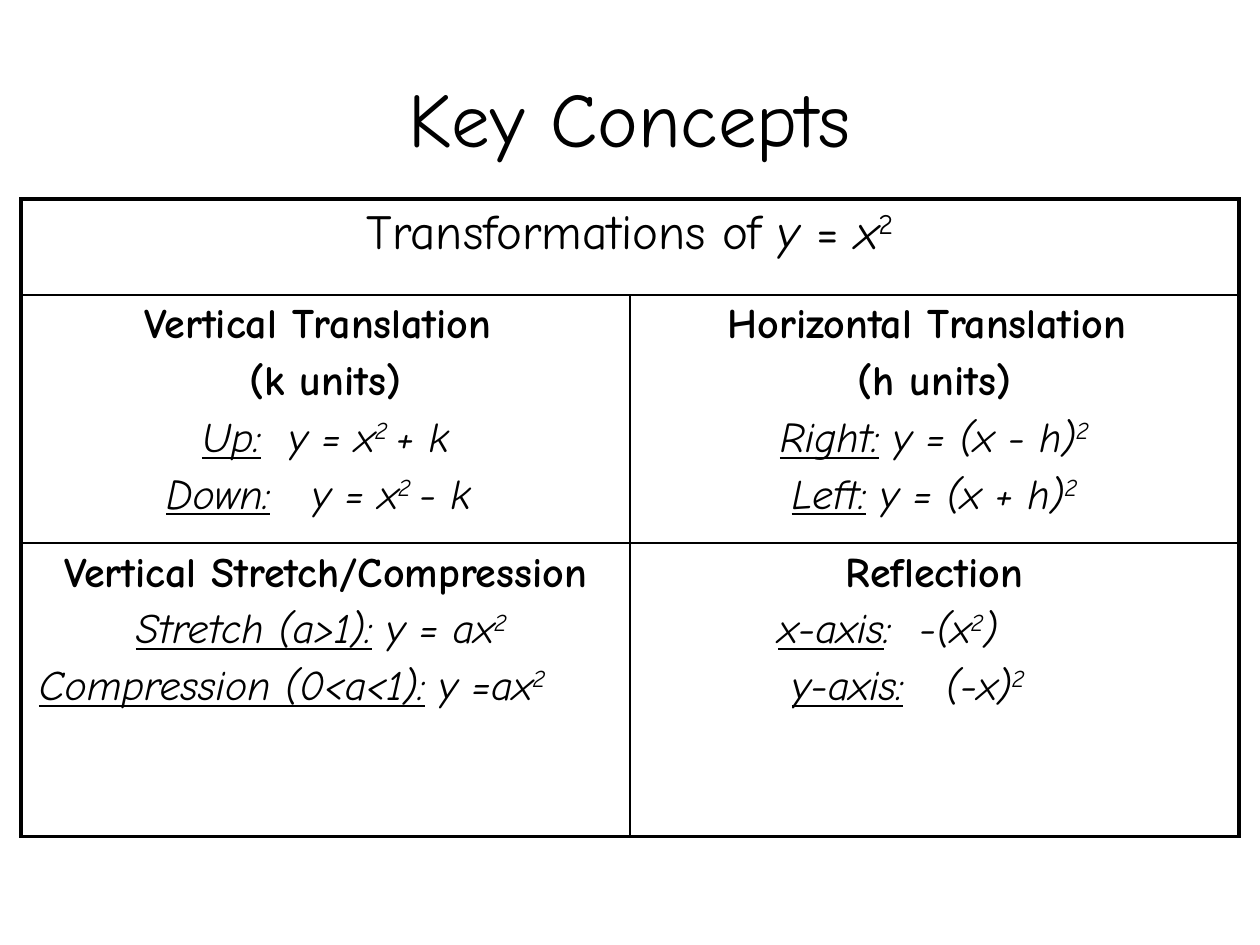
from dataclasses import dataclass

from lxml import etree
from pptx import Presentation
from pptx import util as u
from pptx.dml import color
from pptx.enum import text
from pptx.oxml import ns

FONT = "Comic Neue"
COLOURS = {"ink": "000000"}
COLUMN_WIDTH = 348
ROW_HEIGHTS = (54.7, 141.8, 167.8)
OUTER_LINE, INNER_LINE = 2.25, 1


@dataclass(frozen=True)
class Span:
    """A piece of text; style letters are b(old), i(talic), u(nderline), s(uperscript)."""
    words: str
    style: str = ""


@dataclass(frozen=True)
class Line:
    """A centred line of spans, shifted left by a right margin."""
    spans: tuple[Span, ...]
    right_margin: float = 0


@dataclass(frozen=True)
class Entry:
    """The lines of one table cell."""
    row: int
    column: int
    lines: tuple[Line, ...]
    size: float = 24


def heading(words: str) -> Line:
    """Return a bold line."""
    return Line((Span(words, "b"),))


def rule(label: str, formula: str, power: str = "2", rest: str = "",
         right_margin: float = 0) -> Line:
    """Return an italic line with an underlined label and a squared formula."""
    spans = (Span(label, "iu"), Span(formula, "i"), Span(power, "is"), Span(rest, "i"))
    return Line(tuple(span for span in spans if span.words), right_margin)


ENTRIES = (
    Entry(0, 0, (Line((Span("Transformations of "), Span("y", "i"), Span(" = "),
                       Span("x", "i"), Span("2", "s"))),), 28),
    Entry(1, 0, (heading("Vertical Translation "), heading("(k units)"),
                 rule("Up:", "  y = x", "2 ", "+ k"),
                 rule("Down:", "   y = x", "2 ", "- k "))),
    Entry(1, 1, (heading("Horizontal Translation "), heading("(h units)"),
                 rule("Right:", " y = (x - h)"),
                 rule("Left:", " y = (x + h)"))),
    Entry(2, 0, (heading("Vertical Stretch/Compression"),
                 rule("Stretch (a>1):", " y = ax", "2 "),
                 rule("Compression (0<a<1):", " y =ax", right_margin=38))),
    Entry(2, 1, (heading("Reflection"),
                 rule("x-axis", ":  -(x", rest=")", right_margin=53),
                 rule("y-axis:", "   (-x)", right_margin=30))),
)


def write_line(para, line: Line, size: float) -> None:
    """Fill a paragraph with the formatted spans of a line."""
    para.alignment = text.PP_ALIGN.CENTER
    if line.right_margin:
        para._p.get_or_add_pPr().set("marR", str(u.Pt(line.right_margin)))
    for span in line.spans:
        run = para.add_run()
        run.text = span.words
        font = run.font
        font.name, font.size = FONT, u.Pt(size)
        font.color.rgb = color.RGBColor.from_string(COLOURS["ink"])
        font.bold, font.italic = "b" in span.style, "i" in span.style
        font.underline = "u" in span.style
        if "s" in span.style:
            run._r.get_or_add_rPr().set("baseline", "30000")


def add_title(page, words: str) -> None:
    """Add the centred page title."""
    box = page.shapes.add_textbox(u.Pt(36), u.Pt(21.6), u.Pt(648), u.Pt(90))
    frame = box.text_frame
    frame.word_wrap = True
    frame.vertical_anchor = text.MSO_ANCHOR.MIDDLE
    write_line(frame.paragraphs[0], Line((Span(words),)), 44)


def set_borders(cell, widths: dict[str, float]) -> None:
    """Draw the cell edges, keyed L, R, T and B, in the given widths."""
    properties = cell._tc.get_or_add_tcPr()
    for index, (side, width) in enumerate(widths.items()):
        edge = etree.Element(ns.qn(f"a:ln{side}"), w=str(u.Pt(width)))
        fill = etree.SubElement(edge, ns.qn("a:solidFill"))
        etree.SubElement(fill, ns.qn("a:srgbClr"), val=COLOURS["ink"])
        properties.insert(index, edge)


def add_concepts(page, entries: tuple[Entry, ...]) -> None:
    """Add the table of transformations."""
    table = page.shapes.add_table(3, 2, u.Pt(12), u.Pt(113.8), u.Pt(2 * COLUMN_WIDTH),
                                  u.Pt(sum(ROW_HEIGHTS))).table
    table.first_row = table.horz_banding = False
    for column in table.columns:
        column.width = u.Pt(COLUMN_WIDTH)
    for row, height in zip(table.rows, ROW_HEIGHTS):
        row.height = u.Pt(height)
    table.cell(0, 0).merge(table.cell(0, 1))
    for row in range(3):
        for column in range(2):
            cell = table.cell(row, column)
            cell.fill.background()
            outer = {"L": column == 0, "R": column == 1 or row == 0,
                     "T": row == 0, "B": row == 2}
            set_borders(cell, {side: OUTER_LINE if is_outer else INNER_LINE
                               for side, is_outer in outer.items()})
    for entry in entries:
        frame = table.cell(entry.row, entry.column).text_frame
        for index, line in enumerate(entry.lines):
            para = frame.add_paragraph() if index else frame.paragraphs[0]
            para.space_before = u.Pt(0.2 * entry.size)
            write_line(para, line, entry.size)


def main() -> None:
    """Build and save the deck."""
    deck = Presentation()
    deck.slide_width, deck.slide_height = u.Pt(720), u.Pt(540)
    page = deck.slides.add_slide(deck.slide_layouts[6])
    add_title(page, "Key Concepts")
    add_concepts(page, ENTRIES)
    deck.save("out.pptx")


if __name__ == "__main__":
    main()
